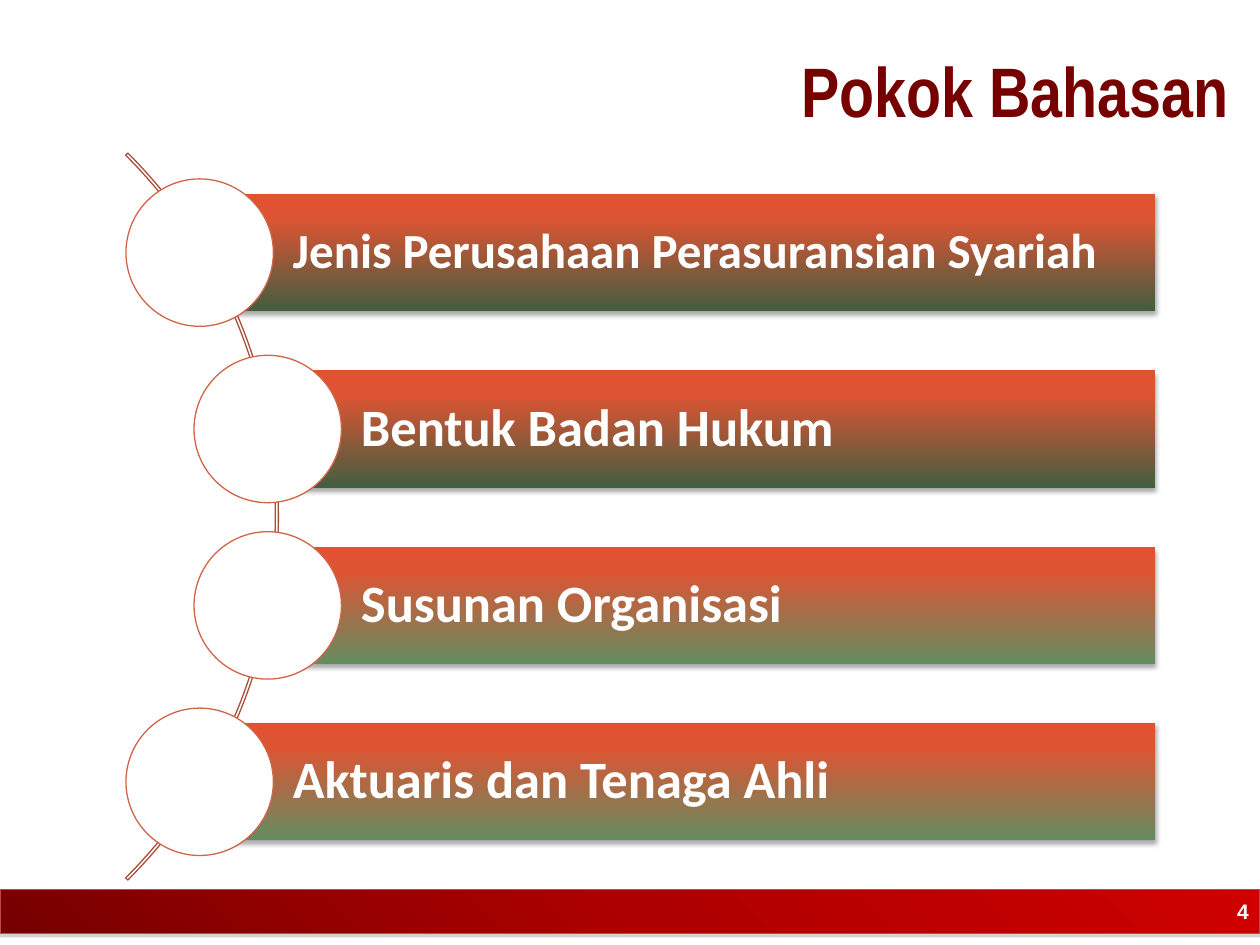
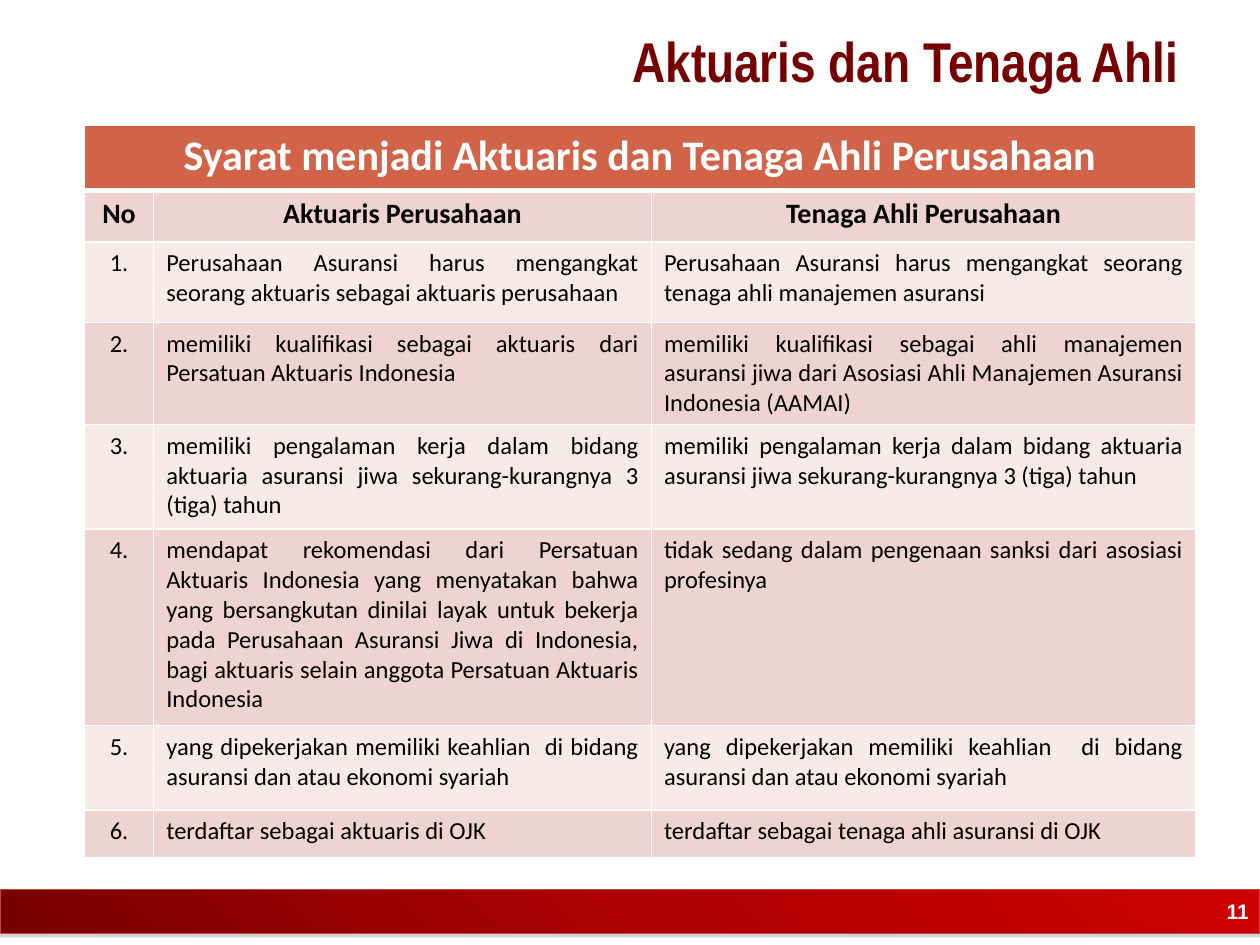
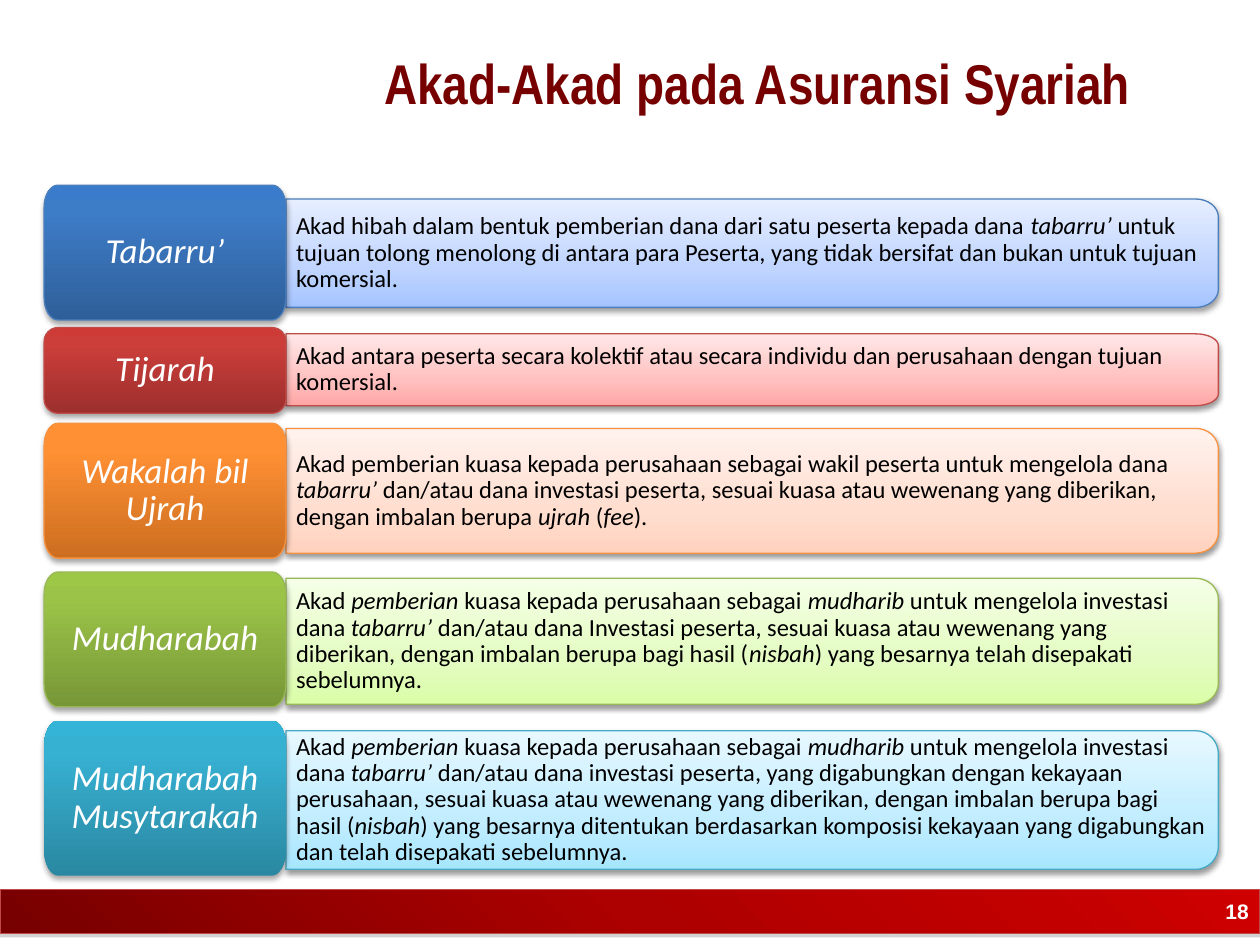
from dataclasses import dataclass
from math import cos, pi, sin

from pptx import Presentation
from pptx.dml.color import RGBColor
from pptx.enum.shapes import MSO_SHAPE as Kind
from pptx.enum.text import MSO_ANCHOR as Anchor, MSO_AUTO_SIZE as AutoSize, PP_ALIGN as Align
from pptx.oxml import parse_xml
from pptx.oxml.ns import nsdecls, qn
from pptx.util import Inches, Pt


# Theme
@dataclass(frozen=True)
class Theme:
    title_font: str = "Arial Narrow"
    body_font: str = "Calibri"
    number_font: str = "Arial"
    white: str = "FFFFFF"
    black: str = "000000"
    title: str = "760000"
    band_line: str = "BE4B48"
    accent: str = "D16349"
    arc_line: str = "A74F3A"
    row_dark: str = "EED3D0"
    row_light: str = "F7EAE9"
    number_size: float = 12
    cell_size: float = 14
    column_size: float = 16
    label_size: float = 20
    heading_size: float = 24
    line_width: float = 0.75


THEME = Theme()


@dataclass(frozen=True)
class Gradient:
    stops: tuple[tuple[int, str], ...]
    angle: int = 90


@dataclass(frozen=True)
class Shadow:
    color: str = "000000"
    opacity: int = 35
    blur: float = 3.1
    distance: float = 1.8


BAND_FILL = Gradient(((0, "770000"), (50, "AD0000"), (100, "CE0000")), 45)
BAND_SHADOW = Shadow("808080", blur=0)
SOLID_SHADOW = Shadow()
PALE_SHADOW = Shadow(opacity=38, distance=1.6)


# Shared drawing functions
def write_text(frame, text: str, *, size: float, color: str = THEME.black,
               font: str = THEME.body_font, bold: bool = False, italic: bool = False,
               align=Align.LEFT, spacing: float | None = None) -> None:
    """Fill the first paragraph; parts between asterisks are italic."""
    para = frame.paragraphs[0]
    para.alignment = align
    if spacing:
        para.line_spacing = spacing
    for index, part in enumerate(text.split("*")):
        if not part:
            continue
        span = para.add_run()
        span.text = part
        span.font.name = font
        span.font.size = Pt(size)
        span.font.bold = bold
        span.font.italic = italic or index % 2 == 1
        span.font.color.rgb = RGBColor.from_string(color)


def set_frame(box, left: float = 0.1, top: float = 0.05, right: float = 0.1,
              bottom: float = 0.05):
    frame = box.text_frame
    frame.word_wrap = True
    frame.auto_size = AutoSize.NONE
    frame.vertical_anchor = Anchor.MIDDLE
    frame.margin_left, frame.margin_top = Inches(left), Inches(top)
    frame.margin_right, frame.margin_bottom = Inches(right), Inches(bottom)
    return frame


def style_shape(shape, fill: Gradient | str | None, line: str | None = None,
                shadow: Shadow | None = None) -> None:
    properties = shape.element.spPr
    if isinstance(fill, Gradient):
        shape.fill.gradient()
        shape.fill.gradient_angle = fill.angle
        stop_list = properties.find(qn("a:gradFill")).find(qn("a:gsLst"))
        for stop in list(stop_list):
            stop_list.remove(stop)
        for position, color in fill.stops:
            stop_list.append(parse_xml(
                f'<a:gs {nsdecls("a")} pos="{position * 1000}"><a:srgbClr val="{color}"/></a:gs>'))
    elif fill:
        shape.fill.solid()
        shape.fill.fore_color.rgb = RGBColor.from_string(fill)
    else:
        shape.fill.background()
    if line:
        shape.line.color.rgb = RGBColor.from_string(line)
        shape.line.width = Pt(THEME.line_width)
    else:
        shape.line.fill.background()
    shape.shadow.inherit = False
    if shadow:
        properties.find(qn("a:effectLst")).append(parse_xml(
            f'<a:outerShdw {nsdecls("a")} blurRad="{Pt(shadow.blur)}" '
            f'dist="{Pt(shadow.distance)}" dir="5400000" rotWithShape="0">'
            f'<a:srgbClr val="{shadow.color}"><a:alpha val="{shadow.opacity * 1000}"/>'
            f'</a:srgbClr></a:outerShdw>'))


def add_preset(page, kind, left: float, top: float, width: float, height: float):
    return page.shapes.add_shape(kind, Inches(left), Inches(top), Inches(width), Inches(height))


def start_page(deck, title: str, left: float, top: float, size: float, number: int):
    """Add a page with its band, title and page number."""
    page = deck.slides.add_slide(deck.slide_layouts[5])
    band = add_preset(page, Kind.RECTANGLE, 0, 7.06, 10, 0.35)
    style_shape(band, BAND_FILL, THEME.band_line, BAND_SHADOW)

    heading = page.shapes.title
    heading.left, heading.top = Inches(left), Inches(top)
    heading.width, heading.height = Inches(6.98), Inches(0.7)
    write_text(set_frame(heading), title, size=size, color=THEME.title,
               font=THEME.title_font, bold=True, align=Align.RIGHT)

    box = page.shapes.add_textbox(Inches(7.68), Inches(7.05), Inches(2.33), Inches(0.36))
    write_text(set_frame(box), str(number), size=THEME.number_size, color=THEME.white,
               font=THEME.number_font, bold=True, align=Align.RIGHT)
    return page


# Topics along an arc
@dataclass(frozen=True)
class Topic:
    text: str
    circle_left: float
    base: str
    size: float = 30


TOPICS = (
    Topic("Jenis Perusahaan Perasuransian Syariah", 1, "435E40", 28),
    Topic("Bentuk Badan Hukum", 1.54, "435E40"),
    Topic("Susunan Organisasi", 1.54, "648C61"),
    Topic("Aktuaris dan Tenaga Ahli", 1, "648C61"),
)
TOPIC_TOP, TOPIC_PITCH = 1.42, 1.4
CIRCLE, BAR_HEIGHT, BAR_RIGHT = 1.17, 0.93, 9.17


def draw_topic(page, topic: Topic, top: float) -> None:
    bar_left = topic.circle_left + CIRCLE / 2
    bar = add_preset(page, Kind.RECTANGLE, bar_left, top + (CIRCLE - BAR_HEIGHT) / 2,
                     BAR_RIGHT - bar_left, BAR_HEIGHT)
    style_shape(bar, Gradient(((0, topic.base), (80, "DE5433"), (100, "E35230"))),
                shadow=SOLID_SHADOW)
    write_text(set_frame(bar, 0.74, 0.08, 0.08, 0.08), topic.text, size=topic.size,
               color=THEME.white, bold=True, spacing=0.9)
    circle = add_preset(page, Kind.OVAL, topic.circle_left, top, CIRCLE, CIRCLE)
    style_shape(circle, THEME.white, THEME.accent)


def build_topics(deck) -> None:
    page = start_page(deck, "Pokok Bahasan", 2.87, 0.36, 40, 4)
    arc = add_preset(page, Kind.BLOCK_ARC, -5.95, 0.02, 8.16, 8.16)
    for index, value in enumerate((189, 27, 0.003)):
        arc.adjustments[index] = value
    style_shape(arc, None, THEME.arc_line)
    for index, topic in enumerate(TOPICS):
        draw_topic(page, topic, TOPIC_TOP + index * TOPIC_PITCH)


# Table of requirements
REQUIREMENT_HEADING = "Syarat menjadi Aktuaris dan Tenaga Ahli Perusahaan"
REQUIREMENT_COLUMNS = ("No", "Aktuaris Perusahaan", "Tenaga Ahli Perusahaan")
REQUIREMENTS = (
    ("Perusahaan Asuransi harus mengangkat seorang aktuaris sebagai aktuaris perusahaan",
     "Perusahaan Asuransi harus mengangkat seorang tenaga ahli manajemen asuransi"),
    ("memiliki kualifikasi sebagai aktuaris dari Persatuan Aktuaris Indonesia",
     "memiliki kualifikasi sebagai ahli manajemen asuransi jiwa dari Asosiasi Ahli Manajemen "
     "Asuransi Indonesia (AAMAI)"),
    ("memiliki pengalaman kerja dalam bidang aktuaria asuransi jiwa sekurang-kurangnya "
     "3 (tiga) tahun",) * 2,
    ("mendapat rekomendasi dari Persatuan Aktuaris Indonesia yang menyatakan bahwa yang "
     "bersangkutan dinilai layak untuk bekerja pada Perusahaan Asuransi Jiwa di Indonesia, "
     "bagi aktuaris selain anggota Persatuan Aktuaris Indonesia",
     "tidak sedang dalam pengenaan sanksi dari asosiasi profesinya"),
    ("yang dipekerjakan memiliki keahlian  di bidang asuransi dan atau ekonomi syariah",) * 2,
    ("terdaftar sebagai aktuaris di OJK", "terdaftar sebagai tenaga ahli asuransi di OJK "),
)
COLUMN_WIDTHS = (0.55, 3.95, 4.32)
ROW_HEIGHTS = (0.52, 0.41, 0.64, 0.79, 0.83, 1.56, 0.67, 0.38)


def style_cell(cell, fill: str, top_line: float, bottom_line: float) -> None:
    cell.fill.solid()
    cell.fill.fore_color.rgb = RGBColor.from_string(fill)
    properties = cell.fill._xPr
    sides = {"lnL": 1, "lnR": 1, "lnT": top_line, "lnB": bottom_line}
    for index, (side, width) in enumerate(sides.items()):
        properties.insert(index, parse_xml(
            f'<a:{side} {nsdecls("a")} w="{Pt(width)}"><a:solidFill>'
            f'<a:srgbClr val="{THEME.white}"/></a:solidFill></a:{side}>'))


def build_requirements(deck) -> None:
    page = start_page(deck, "Aktuaris dan Tenaga Ahli", 2.48, 0.13, 32, 11)
    table = page.shapes.add_table(
        len(ROW_HEIGHTS), len(COLUMN_WIDTHS), Inches(0.67), Inches(0.99),
        Inches(sum(COLUMN_WIDTHS)), Inches(sum(ROW_HEIGHTS))).table
    table.horz_banding = False
    for column, width in zip(table.columns, COLUMN_WIDTHS):
        column.width = Inches(width)
    for row, height in zip(table.rows, ROW_HEIGHTS):
        row.height = Inches(height)

    for column in range(len(COLUMN_WIDTHS)):
        style_cell(table.cell(0, column), THEME.accent, 1, 3)
    table.cell(0, 0).merge(table.cell(0, len(COLUMN_WIDTHS) - 1))
    write_text(table.cell(0, 0).text_frame, REQUIREMENT_HEADING, size=THEME.heading_size,
               color=THEME.white, bold=True, align=Align.CENTER)

    numbered = [(f"{number}.", *texts) for number, texts in enumerate(REQUIREMENTS, 1)]
    for row, texts in enumerate([REQUIREMENT_COLUMNS, *numbered], 1):
        is_head = row == 1
        for column, text in enumerate(texts):
            cell = table.cell(row, column)
            style_cell(cell, THEME.row_dark if row % 2 else THEME.row_light,
                       3 if is_head else 1, 1)
            write_text(cell.text_frame, text, bold=is_head,
                       size=THEME.column_size if is_head else THEME.cell_size,
                       align=Align.CENTER if is_head or column == 0 else Align.JUSTIFY)


# Contracts with a label and an explanation
@dataclass(frozen=True)
class Contract:
    name: str
    text: str
    label_top: float
    label_height: float
    body_top: float
    body_height: float
    label_colors: tuple[str, str, str]
    body_colors: tuple[str, str, str]
    line: str
    label_outlined: bool = True


MANAGED = ("Akad *pemberian *kuasa kepada perusahaan sebagai *mudharib* untuk mengelola "
           "investasi dana *tabarru’* dan/atau dana ")
CONTRACTS = (
    Contract("Tabarru’",
             "Akad hibah dalam bentuk pemberian dana dari satu peserta kepada dana *tabarru’* "
             "untuk tujuan tolong menolong di antara para Peserta, yang tidak bersifat dan "
             "bukan untuk tujuan komersial.",
             1.47, 1.07, 1.58, 0.86, ("2F5F99", "3D7CC7", "3A7CCB"),
             ("A4C4FF", "BFD4FF", "E6EEFF"), "4B7EBC"),
    Contract("Tijarah",
             "Akad antara peserta secara kolektif atau secara individu dan perusahaan dengan "
             "tujuan komersial.",
             2.6, 0.68, 2.65, 0.57, ("9C2F2D", "CB3E3A", "CE3B37"),
             ("FFA6A5", "FFC0BF", "FFE7E7"), "BF4C48"),
    Contract("Wakalah bil Ujrah",
             "Akad pemberian kuasa kepada perusahaan sebagai wakil peserta untuk mengelola dana "
             "*tabarru’* dan/atau dana investasi peserta, sesuai kuasa atau wewenang yang "
             "diberikan, dengan imbalan berupa *ujrah* (*fee*).",
             3.36, 1.07, 3.4, 0.99, ("CC6E20", "FF9034", "FF9136"),
             ("FFD2BD", "FFDED0", "FFF2ED"), "F69240"),
    Contract("Mudharabah",
             MANAGED + "Investasi peserta, sesuai kuasa atau wewenang yang diberikan, dengan "
             "imbalan berupa bagi hasil (*nisbah*) yang besarnya telah disepakati sebelumnya.",
             4.54, 1.07, 4.59, 1, ("779737", "9BC348", "9DC746"),
             ("DAFDA7", "E4FCC2", "F5FFE7"), "98B955"),
    Contract("Mudharabah Musytarakah",
             MANAGED + "investasi peserta, yang digabungkan dengan kekayaan perusahaan, sesuai "
             "kuasa atau wewenang yang diberikan, dengan imbalan berupa bagi hasil (*nisbah*) "
             "yang besarnya ditentukan berdasarkan komposisi kekayaan yang digabungkan dan "
             "telah disepakati sebelumnya.",
             5.72, 1.23, 5.8, 1.1, ("2A88A2", "37B1D2", "34B4D6"),
             ("A7E6FF", "C1EDFF", "E7F8FF"), "46AAC5", label_outlined=False),
)
LABEL_LEFT, LABEL_WIDTH, BODY_WIDTH = 0.35, 1.92, 7.4
CORNER_STEPS = 8


def add_rounded(page, left: float, top: float, width: float, height: float, radius: float,
                round_left: bool):
    """Outline with elliptical corners, a sixth of the height tall."""
    right, bottom, rise = left + width, top + height, height / 6
    left_radius = radius if round_left else 0
    corners = (  # centre, horizontal radius, start angle in quarter turns
        (right - radius, bottom - rise, radius, 0),
        (left + left_radius, bottom - rise, left_radius, 1),
        (left + left_radius, top + rise, left_radius, 2),
        (right - radius, top + rise, radius, 3),
    )
    points = []
    for x, y, reach, quarter in corners:
        if reach == 0:
            points.append((Inches(x), Inches(bottom if quarter == 1 else top)))
            continue
        for step in range(CORNER_STEPS + 1):
            angle = (quarter + step / CORNER_STEPS) * pi / 2
            points.append((Inches(x + reach * cos(angle)), Inches(y + rise * sin(angle))))
    builder = page.shapes.build_freeform(*points[0])
    builder.add_line_segments(points[1:], close=True)
    return builder.convert_to_shape()


def draw_contract(page, contract: Contract) -> None:
    body = add_rounded(page, LABEL_LEFT + LABEL_WIDTH, contract.body_top, BODY_WIDTH,
                       contract.body_height, 0.18, round_left=False)
    style_shape(body, Gradient(tuple(zip((0, 35, 100), contract.body_colors))),
                contract.line, PALE_SHADOW)
    write_text(set_frame(body, 0.08, 0.06, 0.08, 0.06), contract.text,
               size=THEME.cell_size, spacing=0.9)

    label = add_rounded(page, LABEL_LEFT, contract.label_top, LABEL_WIDTH,
                        contract.label_height, 0.11, round_left=True)
    style_shape(label, Gradient(tuple(zip((0, 80, 100), contract.label_colors))),
                contract.line if contract.label_outlined else None, SOLID_SHADOW)
    write_text(set_frame(label, 0.16, 0.11, 0.16, 0.11), contract.name,
               size=THEME.label_size, color=THEME.white, italic=True,
               align=Align.CENTER, spacing=0.9)


def build_contracts(deck) -> None:
    page = start_page(deck, "Akad-Akad pada Asuransi Syariah ", 2.2, 0.3, 32, 18)
    for contract in CONTRACTS:
        draw_contract(page, contract)


def main() -> None:
    deck = Presentation()
    deck.slide_width, deck.slide_height = Inches(10), Inches(7.5)
    build_topics(deck)
    build_requirements(deck)
    build_contracts(deck)
    deck.save("out.pptx")


if __name__ == "__main__":
    main()
